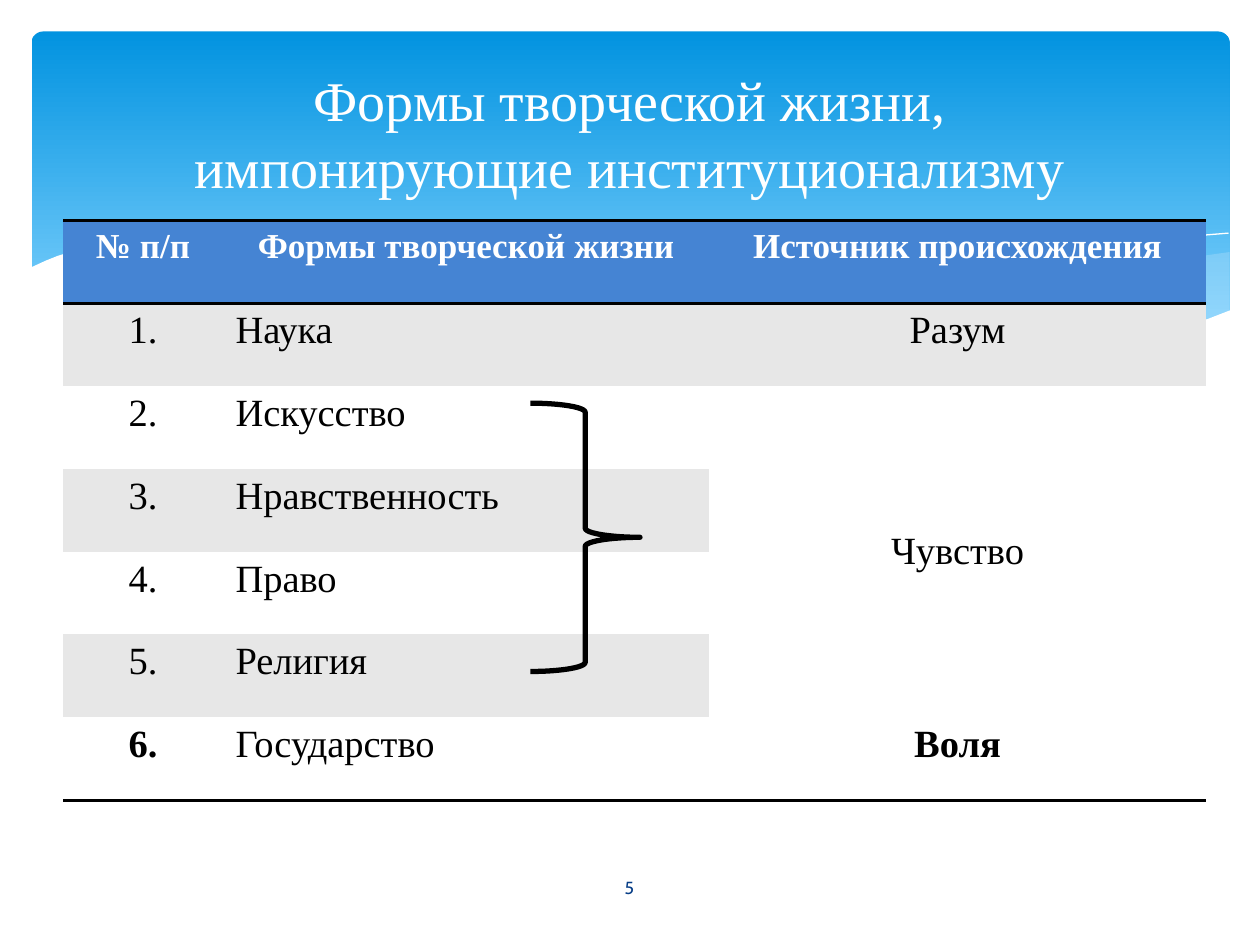
"""Build a slide with a wave banner and a table of creative life forms."""
from pptx import Presentation, oxml
from pptx.dml.color import RGBColor
from pptx.enum import shapes as kinds, text as txt
from pptx.oxml import ns
from pptx.util import Inches, Pt

FONT = "Times New Roman"
HUES = {"top": "0293E0", "low": "83D3FE", "wave": "C6E7FC", "white": "FFFFFF",
        "black": "000000", "head": "4584D3", "band": "E7E7E7", "page": "073E87"}
TITLE = "Формы творческой жизни,\vимпонирующие институционализму"
ROWS = [
    ("№ п/п", "Формы творческой жизни", "Источник происхождения"),
    ("1.", "Наука", "Разум"),
    ("2.", "Искусство", "Чувство"),
    ("3.", "Нравственность", ""),
    ("4.", "Право", ""),
    ("5.", "Религия", ""),
    ("6.", "Государство", "Воля"),
]
COLS = (1.27, 3.86, 3.94)
HIGH = 4.6 / len(ROWS)
RULED = {0: ("lnT", "lnB"), len(ROWS) - 1: ("lnB",)}
MERGE = (2, 5)

WAVES = [
    {"fill": "wave", "alpha": 29, "pts": [
        (9.76, 2), (9.48, 2.04), (9.21, 2.1), (8.91, 2.16), (8.61, 2.23), (8.05, 2.37),
        (7.53, 2.48), (7.06, 2.57), (6.61, 2.65), (6.91, 2.69), (7.32, 2.74), (7.69, 2.77),
        (8.03, 2.78), (8.35, 2.77), (8.63, 2.75), (8.89, 2.72), (9.13, 2.67), (9.35, 2.62),
        (9.49, 2.57), (9.76, 2.47)]},
    {"fill": "wave", "alpha": 40, "pts": [
        (8.93, 2.73), (8.66, 2.69), (8.07, 2.6), (7.41, 2.47), (6.68, 2.31), (6.29, 2.22),
        (5.98, 2.14), (5.69, 2.08), (5.41, 2.03), (5.14, 1.98), (4.89, 1.94), (4.42, 1.89),
        (3.99, 1.86), (3.61, 1.85), (3.28, 1.87), (2.86, 1.91), (3.23, 1.96), (3.62, 2.03),
        (4.04, 2.11), (4.49, 2.22), (5.3, 2.4), (5.84, 2.52), (6.34, 2.61), (6.8, 2.68),
        (7.22, 2.74), (7.61, 2.77), (7.96, 2.78), (8.28, 2.78), (8.57, 2.77)]},
    {"pts": [
        (3.09, 1.95), (3.28, 1.92), (3.53, 1.89), (3.87, 1.87), (4.16, 1.87), (4.5, 1.88),
        (4.89, 1.9), (5.33, 1.94), (5.82, 2), (6.36, 2.08), (6.95, 2.19), (7.6, 2.33),
        (8.31, 2.51), (9.07, 2.72)]},
    {"pts": [
        (6.13, 2.57), (6.53, 2.46), (6.95, 2.35), (7.48, 2.23), (8.06, 2.1), (8.66, 1.99),
        (8.95, 1.94), (9.24, 1.9), (9.51, 1.87), (9.75, 1.85)]},
    {"fill": "white", "alpha": 100, "pts": [
        (9.77, 2.46), (9.59, 2.53), (9.4, 2.59), (9.2, 2.65), (8.99, 2.69), (8.75, 2.73),
        (8.5, 2.75), (8.23, 2.77), (7.93, 2.76), (7.61, 2.75), (7.26, 2.72), (6.88, 2.68),
        (6.48, 2.62), (6.03, 2.54), (5.55, 2.45), (5.03, 2.33), (4.47, 2.2), (3.91, 2.07),
        (3.4, 1.97), (2.92, 1.9), (2.5, 1.86), (2.11, 1.84), (1.77, 1.84), (1.46, 1.85),
        (1.19, 1.87), (0.95, 1.91), (0.76, 1.95), (0.59, 1.99), (0.46, 2.03), (0.36, 2.07),
        (0.23, 2.13), (0.23, 3.29), (9.77, 3.29)]},
]


def hue(name):
    return RGBColor.from_string(HUES[name])


def box(*sizes):
    return [Inches(size) for size in sizes]


def style(frame, size, color, font=FONT, bold=False, align=txt.PP_ALIGN.CENTER):
    for para in frame.paragraphs:
        para.alignment = align
        for run in para.runs:
            run.font.name, run.font.size, run.font.bold = font, Pt(size), bold
            run.font.color.rgb = hue(color)


def draw_band(slide):
    band = slide.shapes.add_shape(
        kinds.MSO_SHAPE.ROUNDED_RECTANGLE, *box(0.25, 0.25, 9.51, 2.7))
    band.shadow.inherit = False
    band.adjustments[0] = 0.034
    band.line.fill.background()
    band.fill.gradient()
    band.fill.gradient_angle = 270
    for stop, place, name in zip(band.fill.gradient_stops, (0, 0.9), ("top", "low")):
        stop.position, stop.color.rgb = place, hue(name)


def draw_wave(slide, pts, fill=None, alpha=100):
    first, *rest = [box(*point) for point in pts]
    path = slide.shapes.build_freeform(*first)
    path.add_line_segments(rest, close=bool(fill))
    wave = path.convert_to_shape()
    wave.shadow.inherit = False
    if not fill:
        wave.fill.background()
        wave.line.color.rgb, wave.line.width = hue("white"), Pt(0)
        return
    wave.line.fill.background()
    wave.fill.solid()
    wave.fill.fore_color.rgb = hue(fill)
    color = wave._element.spPr.find(".//" + ns.qn("a:srgbClr"))
    color.append(oxml.parse_xml(f'<a:alpha {ns.nsdecls("a")} val="{alpha * 1000}"/>'))


def draw_table(slide):
    table = slide.shapes.add_table(
        len(ROWS), len(COLS), *box(0.5, 1.75, sum(COLS), HIGH * len(ROWS))).table
    table.first_row = table.horz_banding = False
    table._tbl.tblPr.find(ns.qn("a:tableStyleId")).text = \
        "{2D5ABB26-0587-4C30-8999-92F81FD0307C}"
    for col, width in zip(table.columns, COLS):
        col.width = Inches(width)
    for r, row in enumerate(ROWS):
        table.rows[r].height = Inches(HIGH)
        for c, words in enumerate(row):
            cell = table.cell(r, c)
            cell.text_frame.text = words
            left = r and c == 1
            style(cell.text_frame, 22 if r else 20, "black" if r else "white",
                  bold=r == 0 or (r == len(ROWS) - 1 and c != 1),
                  align=txt.PP_ALIGN.LEFT if left else txt.PP_ALIGN.CENTER)
            for side in RULED.get(r, ()):
                cell._tc.get_or_add_tcPr().append(oxml.parse_xml(
                    f'<a:{side} {ns.nsdecls("a")} w="{Pt(2)}"><a:solidFill>'
                    f'<a:srgbClr val="{HUES["black"]}"/></a:solidFill></a:{side}>'))
            plain = r % 2 == 0 or (c == 2 and MERGE[0] <= r <= MERGE[1])
            cell.fill.solid()
            cell.fill.fore_color.rgb = hue("head" if r == 0 else "white" if plain else "band")
    source = table.cell(MERGE[0], 2)
    source.merge(table.cell(MERGE[1], 2))
    source.vertical_anchor = txt.MSO_ANCHOR.MIDDLE


def draw_text(slide):
    title = slide.shapes.title
    slide.shapes._spTree.append(title._element)
    title.left, title.top, title.width, title.height = box(0.5, 0.37, 9, 1.37)
    title.text_frame.text = TITLE
    style(title.text_frame, 32, "white")
    page = slide.shapes.add_textbox(*box(4.36, 6.84, 1.27, 0.4))
    page.text_frame.text = "5"
    style(page.text_frame, 10, "page", font="Cabin")
    for frame in (title.text_frame, page.text_frame):
        frame.word_wrap = True
        frame.auto_size = txt.MSO_AUTO_SIZE.NONE
        frame.vertical_anchor = txt.MSO_ANCHOR.MIDDLE


def draw_brace(slide):
    brace = slide.shapes.add_shape(
        kinds.MSO_SHAPE.RIGHT_BRACE, *box(4.21, 3.2, 0.87, 2.13))
    brace.shadow.inherit = False
    brace.fill.background()
    brace.line.color.rgb, brace.line.width = hue("black"), Pt(3)


def main():
    deck = Presentation()
    deck.slide_width, deck.slide_height = box(10, 7.5)
    slide = deck.slides.add_slide(deck.slide_layouts[5])
    draw_band(slide)
    for wave in WAVES:
        draw_wave(slide, **wave)
    draw_table(slide)
    draw_text(slide)
    draw_brace(slide)
    deck.save("out.pptx")


if __name__ == "__main__":
    main()
